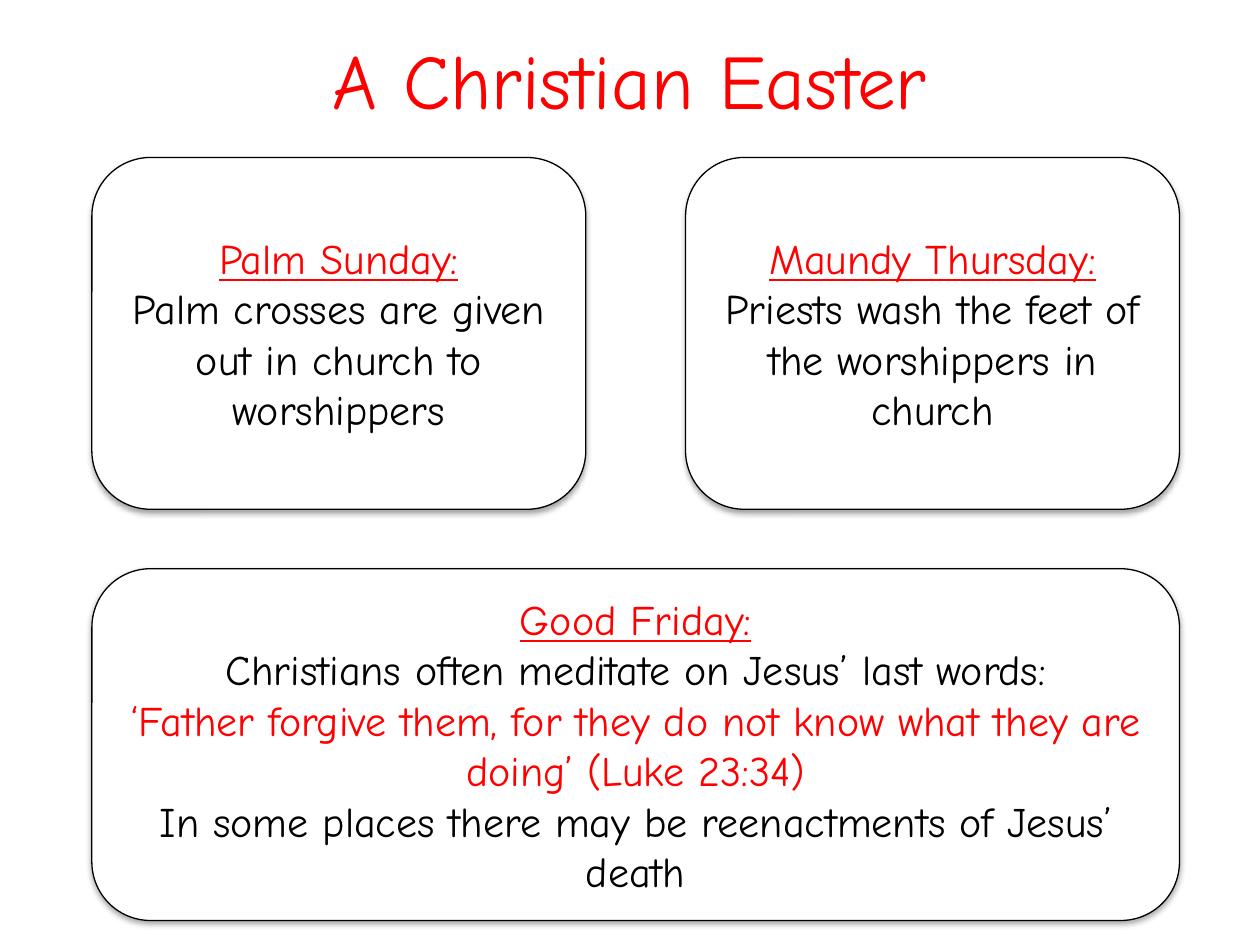
from lxml import etree
from pptx import Presentation
from pptx.dml.color import RGBColor
from pptx.enum import shapes, text
from pptx.oxml import ns
from pptx.util import Pt

RED, BLACK, WHITE = "FF0000", "000000", "FFFFFF"
FONT = "Comic Neue"

TITLE = "A Christian Easter"
DAYS = [
    (0, 0, 1, "Palm Sunday:", [
        ("Palm crosses are given out in church to worshippers", BLACK)]),
    (0, 1, 1, "Maundy Thursday:", [
        ("Priests wash the feet of the worshippers in church", BLACK)]),
    (1, 0, 2, "Good Friday:", [
        ("Christians often meditate on Jesus’ last words:", BLACK),
        ("‘Father forgive them, for they do not know what they are doing’ (Luke 23:34)", RED),
        ("In some places there may be reenactments of Jesus’ death", BLACK)]),
]

LEFT, TOP = 52.5, 90
CARD_W, CARD_H = 282.25, 201
GAP_X, GAP_Y = 57, 34


def color(value):
    return RGBColor.from_string(value)


def add_line(paragraph, words, size, ink, underline=False):
    paragraph.alignment = text.PP_ALIGN.CENTER
    run = paragraph.add_run()
    run.text = words
    run.font.name = FONT
    run.font.size = Pt(size)
    run.font.color.rgb = color(ink)
    run.font.underline = underline


def center_frame(frame):
    frame.word_wrap = True
    frame.vertical_anchor = text.MSO_ANCHOR.MIDDLE


def add_shadow(card):
    card.shadow.inherit = False
    effects = card.element.spPr.find(ns.qn("a:effectLst"))
    shadow = etree.SubElement(
        effects, ns.qn("a:outerShdw"), blurRad=str(Pt(3.1)), dist=str(Pt(1.8)),
        dir="5400000", rotWithShape="0")
    ink = etree.SubElement(shadow, ns.qn("a:srgbClr"), val=BLACK)
    etree.SubElement(ink, ns.qn("a:alpha"), val="35000")


def add_card(slide, row, column, span, day, lines):
    card = slide.shapes.add_shape(
        shapes.MSO_SHAPE.ROUNDED_RECTANGLE,
        Pt(LEFT + column * (CARD_W + GAP_X)),
        Pt(TOP + row * (CARD_H + GAP_Y)),
        Pt(span * CARD_W + (span - 1) * GAP_X), Pt(CARD_H))
    card.fill.solid()
    card.fill.fore_color.rgb = color(WHITE)
    card.line.color.rgb = color(BLACK)
    card.line.width = Pt(0.75)
    add_shadow(card)
    frame = card.text_frame
    center_frame(frame)
    add_line(frame.paragraphs[0], day, 24, RED, True)
    for words, ink in lines:
        add_line(frame.add_paragraph(), words, 24, ink)


def main():
    deck = Presentation()
    deck.slide_width, deck.slide_height = Pt(720), Pt(540)
    slide = deck.slides.add_slide(deck.slide_layouts[6])
    title = slide.shapes.add_textbox(Pt(36), Pt(0), Pt(648), Pt(90)).text_frame
    center_frame(title)
    add_line(title.paragraphs[0], TITLE, 44, RED)
    for day in DAYS:
        add_card(slide, *day)
    deck.save("out.pptx")


if __name__ == "__main__":
    main()
